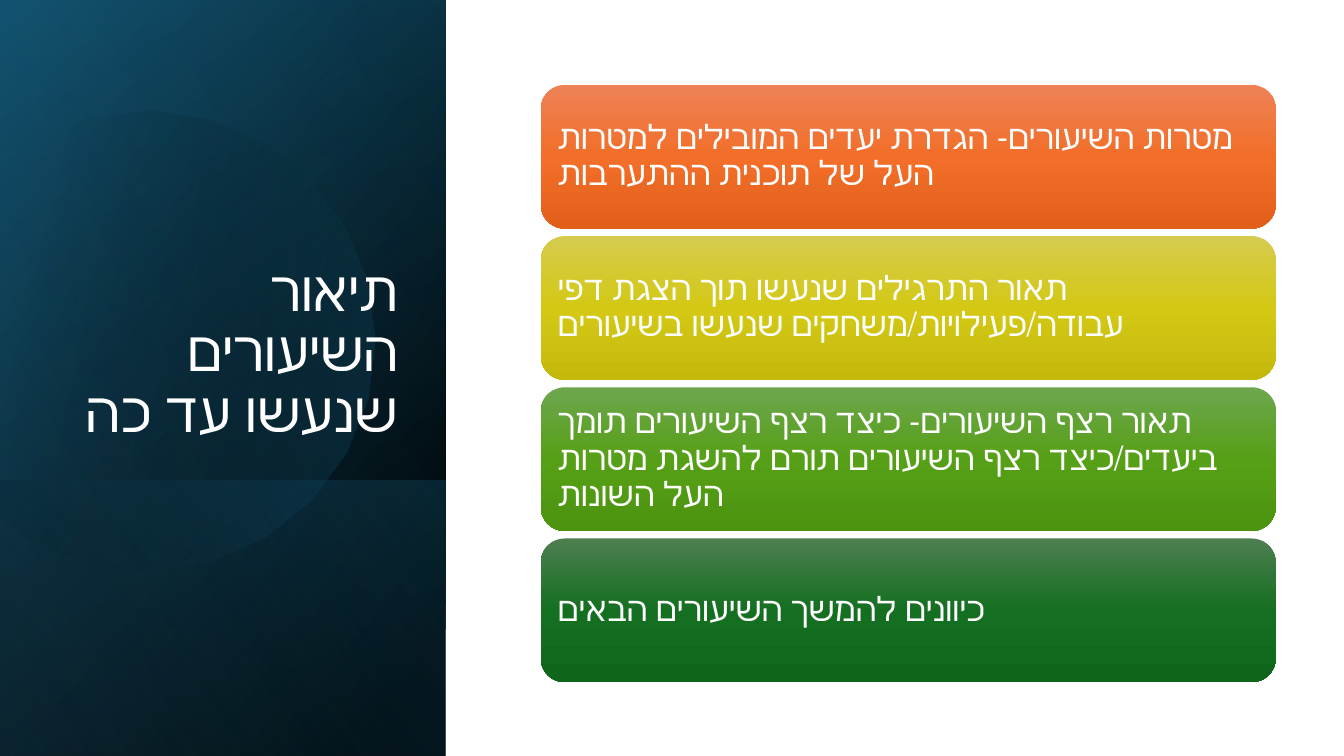
from math import cos, dist, radians, sin

from lxml.etree import SubElement
from pptx import Presentation
from pptx.dml.color import RGBColor
from pptx.enum.shapes import MSO_SHAPE
from pptx.enum.text import MSO_ANCHOR, PP_ALIGN
from pptx.oxml.ns import qn
from pptx.util import Cm, Pt

FONT = "Lato"
WHITE = "FFFFFF"

TITLE = "תיאור השיעורים שנעשו עד כה"
# Each topic: text and its gradient colours from top to bottom
TOPICS = [
    ("מטרות השיעורים- הגדרת יעדים המובילים למטרות העל של תוכנית ההתערבות",
     ("ED8257", "F26E29", "E25F1A")),
    ("תאור התרגילים שנעשו תוך הצגת דפי עבודה/פעילויות/משחקים שנעשו בשיעורים",
     ("D5CB4E", "D4C815", "C4B90B")),
    ("תאור רצף השיעורים- כיצד רצף השיעורים תומך ביעדים/כיצד רצף השיעורים "
     "תורם להשגת מטרות העל השונות",
     ("6DA64E", "56A017", "4C930F")),
    ("כיוונים להמשך השיעורים הבאים",
     ("4D7E50", "156F21", "0F661B")),
]

# Glow disc: start point, then segments of one point (line) or three (curve)
DISC_START = (3.78, 2.79)
DISC_SEGMENTS = [
    [(6.25, 2.84), (8.51, 4.5), (9.22, 6.99)],
    [(10.11, 10.08), (8.33, 13.28), (5.26, 14.17)],
    [(3.33, 14.73), (1.35, 14.25), (-0.08, 13.06)],
    [(-0.38, 12.78)],
    [(-0.38, 4.45)],
    [(0, 4.09)],
    [(0.58, 3.61), (1.27, 3.25), (2.03, 3.02)],
    [(2.62, 2.87), (3.2, 2.79), DISC_START],
]
DISC_CENTRE = (4.03, 8.5)
DISC_TILT = 16.1


def color(hex_value):
    return RGBColor.from_string(hex_value)


def paint(shape, stops, angle):
    """Fill with a gradient; a stop is (position %, colour, opacity %)."""
    shape.shadow.inherit = False
    shape.line.fill.background()
    shape.fill.gradient()
    gradient = shape._element.spPr.find(qn("a:gradFill"))
    stop_list = gradient.find(qn("a:gsLst"))
    stop_list.clear()
    for position, hex_value, opacity in stops:
        stop = SubElement(stop_list, qn("a:gs"), pos=str(position * 1000))
        rgb = SubElement(stop, qn("a:srgbClr"), val=str(color(hex_value)))
        if opacity < 100:
            SubElement(rgb, qn("a:alpha"), val=str(opacity * 1000))
    gradient.find(qn("a:lin")).set("ang", str(angle * 60000))


def write(frame, text, size, align, anchor):
    """Write one right-to-left paragraph."""
    frame.word_wrap = True
    frame.vertical_anchor = anchor
    paragraph = frame.paragraphs[0]
    paragraph.alignment = align
    paragraph.line_spacing = 0.9
    paragraph._p.get_or_add_pPr().set("rtl", "1")
    run = paragraph.add_run()
    run.text = text
    run.font.color.rgb = color(WHITE)
    for name, value in {"name": FONT, "size": Pt(size)}.items():
        setattr(run.font, name, value)


def add_layer(slide, box, stops, angle):
    """Cover the box with a mirrored rectangle turned by a quarter."""
    left, top, width, height = box
    shift = (width - height) / 2
    layer = slide.shapes.add_shape(
        MSO_SHAPE.RECTANGLE, Cm(left + shift), Cm(top - shift), Cm(height), Cm(width))
    layer.rotation = 90
    layer._element.spPr.find(qn("a:xfrm")).set("flipH", "1")
    paint(layer, stops, angle)


def disc_outline(spacing=1.3):
    """Follow the curves with points at about the given spacing."""
    points = [DISC_START]
    for segment in DISC_SEGMENTS:
        if len(segment) == 1:
            points += segment
            continue
        curve = [points[-1], *segment]
        steps = max(1, round(dist(curve[0], curve[-1]) / spacing))
        for step in range(1, steps + 1):
            t = step / steps
            weights = ((1 - t) ** 3, 3 * t * (1 - t) ** 2, 3 * t * t * (1 - t), t ** 3)
            points.append(tuple(
                sum(w * p[axis] for w, p in zip(weights, curve)) for axis in (0, 1)))
    return points


def add_disc(slide, box):
    """Draw the disc upright, then tilt it back into place."""
    left, top = box[:2]
    centre_x, centre_y = DISC_CENTRE
    c, s = cos(radians(DISC_TILT)), sin(radians(DISC_TILT))
    upright = []
    for x, y in disc_outline():
        dx, dy = x - centre_x, y - centre_y
        upright.append((Cm(left + centre_x + dx * c - dy * s),
                        Cm(top + centre_y + dx * s + dy * c)))
    builder = slide.shapes.build_freeform(*upright[0])
    builder.add_line_segments(upright[1:-1], close=True)
    disc = builder.convert_to_shape()
    disc.rotation = 360 - DISC_TILT
    paint(disc, [(29, "000000", 0), (100, "156082", 43)], 30)


def add_title_panel(slide, box):
    left, top, width, height = box
    foot_height = 6.95
    foot = (left, top + height - foot_height, width, foot_height)

    # Layered backdrop
    add_layer(slide, box, [(8, "000000", 100), (100, "104862", 100)], 50)
    add_layer(slide, box, [(0, "000000", 0), (99, "156082", 46)], 30)
    add_layer(slide, foot, [(2, "156082", 29), (100, "000000", 30)], 130)
    add_disc(slide, box)
    add_layer(slide, box, [(0, "000000", 0), (99, "46B1E1", 11)], 120)

    # Title
    title = slide.shapes.add_textbox(
        Cm(left + 1.63), Cm(top + 4.67), Cm(8.66), Cm(6.65))
    write(title.text_frame, TITLE, 40, PP_ALIGN.RIGHT, MSO_ANCHOR.BOTTOM)


def add_topic_cards(slide, box, gap=0.19):
    left, top, width, height = box
    card_height = (height - gap * (len(TOPICS) - 1)) / len(TOPICS)
    for index, (topic, shades) in enumerate(TOPICS):
        card = slide.shapes.add_shape(
            MSO_SHAPE.ROUNDED_RECTANGLE, Cm(left),
            Cm(top + index * (card_height + gap)), Cm(width), Cm(card_height))
        paint(card, [(50 * i, shade, 100) for i, shade in enumerate(shades)], 90)
        for side in ("left", "top", "right", "bottom"):
            setattr(card.text_frame, f"margin_{side}", Cm(0.25))
        write(card.text_frame, topic, 24, PP_ALIGN.LEFT, MSO_ANCHOR.MIDDLE)


def main():
    deck = Presentation()
    deck.slide_width, deck.slide_height = Cm(33.87), Cm(19.05)
    slide = deck.slides.add_slide(deck.slide_layouts[6])
    add_title_panel(slide, (0, 0, 11.23, 19.05))
    add_topic_cards(slide, (13.63, 2.14, 18.52, 15.05))
    deck.save("out.pptx")


if __name__ == "__main__":
    main()
